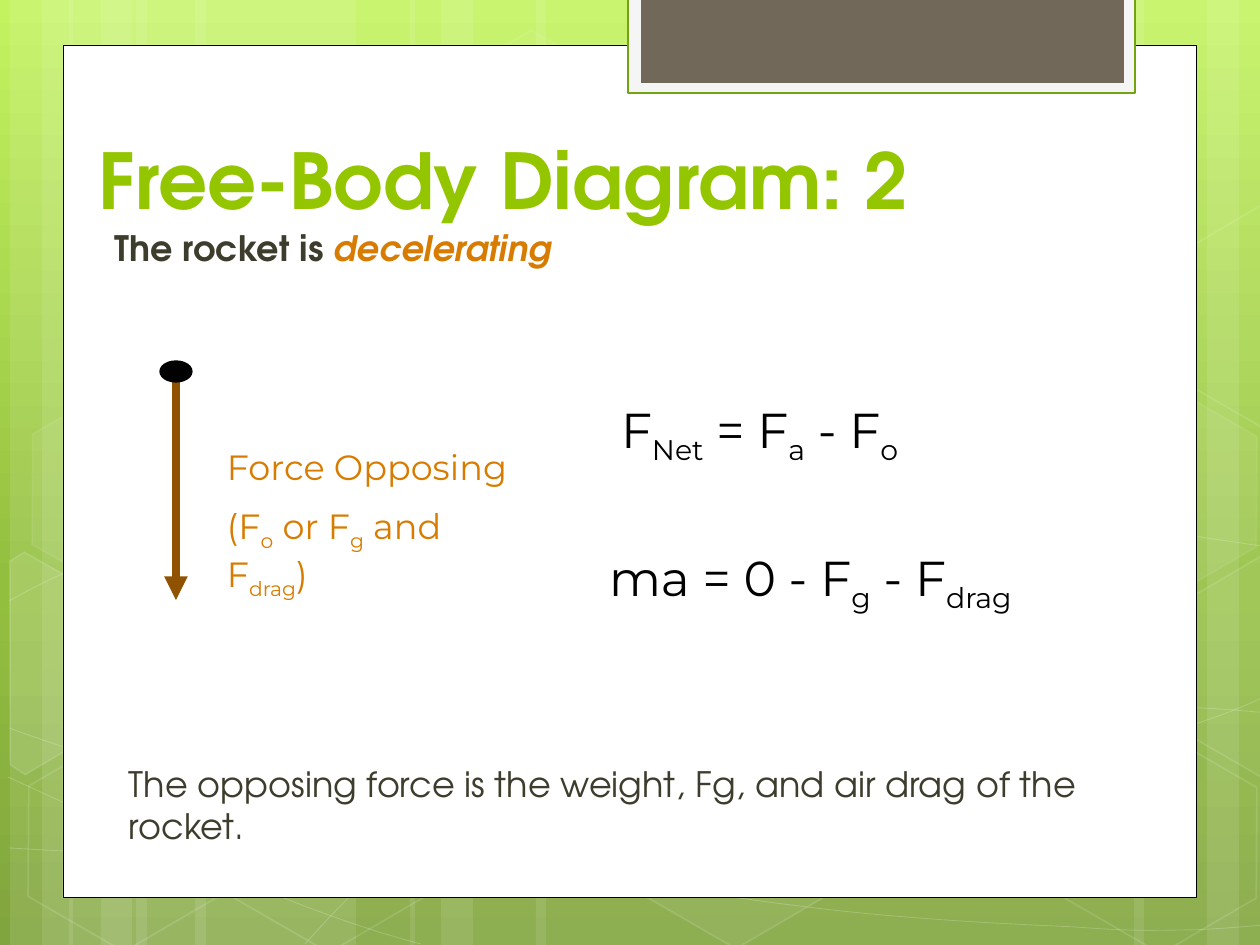
"""Build the slide on the forces acting on a decelerating rocket."""
from copy import deepcopy
from math import cos, radians, sin

from lxml.etree import SubElement
from pptx import Presentation
from pptx.dml.color import RGBColor
from pptx.enum.shapes import MSO_CONNECTOR, MSO_SHAPE
from pptx.enum.text import MSO_ANCHOR
from pptx.oxml.ns import qn
from pptx.util import Emu, Pt

EMU_PER_PX = 914400 / 126
TILT = 30
WHITE, BLACK, ORANGE, DARK = "FFFFFF", "000000", "D77C01", "3E3D2D"
HEAD_FONT, BODY_FONT = "TeX Gyre Adventor", "Montserrat"

STRIPES = [(136, 220), (10, 63), (42, 105), (195, 220), (69, 63), (101, 105),
           (924, 220), (1207, 63), (1134, 105), (536, 388), (410, 63), (441, 105)]
CURVES = [
    [(9, 848), (77, 852), (145, 856), (239, 854), (334, 853), (451, 851), (577, 838),
     (703, 825), (882, 801), (998, 777), (1113, 753), (1231, 716), (1269, 694)],
    [(9, 601), (45, 581), (82, 562), (152, 543), (224, 524), (326, 496), (437, 488),
     (549, 479), (685, 478), (824, 488), (963, 498), (1193, 537), (1269, 547)],
    [(8, 777), (160, 847), (311, 916), (421, 944)],
    [(9, 728), (48, 742), (88, 756), (161, 776), (234, 795), (344, 827), (450, 848),
     (554, 869), (687, 892), (791, 905), (896, 919), (1008, 924), (1075, 927),
     (1140, 932), (1158, 930), (1191, 930), (1223, 929), (1246, 926), (1269, 925)],
    [(305, 944), (328, 919), (350, 893), (381, 871), (411, 848), (454, 823), (489, 805),
     (524, 788), (546, 780), (592, 767), (638, 754), (722, 737), (766, 728),
     (811, 719), (818, 719), (857, 717), (896, 713), (958, 709), (1000, 708),
     (1044, 707), (1116, 708), (1116, 708), (1144, 708), (1173, 708), (1201, 708),
     (1223, 709), (1245, 711), (1256, 712), (1268, 713), (1264, 712), (1268, 713)],
]
HEXAGONS = [(421, 45, 4, 8), (626, 742, 6, 12), (14, 745, 0, 12), (18, 393, 7, 8),
            (219, 746, 0, 12), (949, 571, 10, 12), (1051, 747, 0, 12), (1051, 396, 7, 8)]
CUT_HEXAGONS = [
    ([(10, 561), (24, 552), (121, 607), (120, 718), (25, 774), (10, 765)], (45, 674), 10),
    ([(1167, 611), (1261, 556), (1271, 562), (1271, 772), (1263, 777), (1167, 722)],
     (1241, 655), 4),
    ([(1167, 261), (1261, 205), (1273, 212), (1271, 422), (1263, 427), (1167, 372)],
     (1241, 304), 0),
]


def px(n):
    return Emu(round(n * EMU_PER_PX))


def rgb(color):
    return RGBColor.from_string(color)


def untilt(points, center):
    c, s = cos(radians(TILT)), sin(radians(TILT))
    cx, cy = center
    return [(cx + (x - cx) * c + (y - cy) * s, cy - (x - cx) * s + (y - cy) * c)
            for x, y in points]


class Deck:
    def __init__(self):
        self.prs = Presentation()
        self.prs.slide_width, self.prs.slide_height = px(1260), px(945)
        self.s = self.prs.slides.add_slide(self.prs.slide_layouts[6])

    def background(self, *stops):
        fill = self.s.background.fill
        fill.gradient()
        fill.gradient_angle = 270
        gs_list = self.s._element.find(".//" + qn("a:gsLst"))
        gs_list.insert(1, deepcopy(gs_list[0]))
        for stop, (position, color) in zip(fill.gradient_stops, stops):
            stop.position, stop.color.rgb = position, rgb(color)

    def paint(self, target, color, alpha):
        target.solid()
        target.fore_color.rgb = rgb(color)
        if alpha < 100:
            clr = target._xPr.find(".//" + qn("a:srgbClr"))
            SubElement(clr, qn("a:alpha"), val=str(alpha * 1000))

    def style(self, sp, fill, fill_alpha, line, width, line_alpha):
        sp.shadow.inherit = False
        if fill and fill_alpha:
            self.paint(sp.fill, fill, fill_alpha)
        else:
            sp.fill.background()
        if line:
            self.paint(sp.line.fill, line, line_alpha)
            sp.line.width = Pt(width)
        else:
            sp.line.fill.background()
        return sp

    def shape(self, kind, x, y, w, h, fill, fill_alpha=100, line=None, width=1, line_alpha=100):
        sp = self.s.shapes.add_shape(kind, px(x), px(y), px(w), px(h))
        return self.style(sp, fill, fill_alpha, line, width, line_alpha)

    def outline(self, points, width, line_alpha, fill_alpha=0, close=False):
        builder = self.s.shapes.build_freeform(*points[0], scale=EMU_PER_PX)
        builder.add_line_segments(points[1:], close=close)
        sp = builder.convert_to_shape()
        return self.style(sp, WHITE, fill_alpha, WHITE, width, line_alpha)

    def curve(self, points, width, line_alpha):
        sp = self.outline(points, width, line_alpha)
        segments = list(sp._element.iter(qn("a:lnTo")))
        outline = segments[0].getparent()
        for i in range(0, len(segments), 3):
            bezier = SubElement(outline, qn("a:cubicBezTo"))
            for segment in segments[i:i + 3]:
                bezier.append(segment[0])
                outline.remove(segment)

    def arrow(self, x1, y1, x2, y2, color, width):
        sp = self.s.shapes.add_connector(MSO_CONNECTOR.STRAIGHT, px(x1), px(y1), px(x2), px(y2))
        sp.line.color.rgb, sp.line.width = rgb(color), Pt(width)
        SubElement(sp.line._get_or_add_ln(), qn("a:tailEnd"), type="triangle")
        SubElement(sp._element.spPr, qn("a:effectLst"))

    def text(self, x, y, w, h, text, size, color, font, bold=False, accent=None, indent=0):
        tf = self.s.shapes.add_textbox(px(x), px(y), px(w), px(h)).text_frame
        tf.word_wrap = True
        tf.margin_left = px(13 + indent)
        for i, line in enumerate(text.split("\n")):
            p = tf.add_paragraph() if i else tf.paragraphs[0]
            p.space_before = Pt(size / 2 if i else 0)
            for j, part in enumerate(line.split("|")):
                r = p.add_run()
                r.text = part
                r.font.name, r.font.size, r.font.bold = font, Pt(size), bold
                r.font.color.rgb = rgb(color)
                if j % 2 and accent:
                    r.font.italic, r.font.color.rgb = True, rgb(accent)
                elif j % 2:
                    r._r.get_or_add_rPr().set("baseline", "-25000")
        return tf


def main():
    deck = Deck()
    deck.background((0, "C3F35F"), (0.62, "93BF3F"), (1, "81A53E"))
    for x, w in STRIPES:
        deck.shape(MSO_SHAPE.RECTANGLE, x, 0, w, 945, WHITE, 10)
    for points in CURVES:
        deck.curve(points, 0.5, 20)
    for x, y, fill_alpha, line_alpha in HEXAGONS:
        sp = deck.shape(MSO_SHAPE.HEXAGON, x, y, 220, 192, WHITE, fill_alpha, WHITE, 1, line_alpha)
        sp.adjustments[0] = 0.285
        sp.rotation = TILT
    for points, center, fill_alpha in CUT_HEXAGONS:
        sp = deck.outline(untilt(points, center), 1, 12, fill_alpha, close=True)
        sp.rotation = TILT

    deck.shape(MSO_SHAPE.RECTANGLE, 63, 45, 1134, 853, WHITE, line=BLACK, width=0.5)
    deck.shape(MSO_SHAPE.RECTANGLE, 628, -3, 507, 96, "F5F5F5", line="74A510", width=1.25)
    deck.shape(MSO_SHAPE.RECTANGLE, 641, -3, 483, 86, "71685A")

    deck.arrow(176, 369, 176, 600, "8F5201", 4.5)
    deck.text(608, 393, 399, 72, "F|Net| = F|a| - F|o", 28, BLACK, BODY_FONT)
    deck.text(102, 220, 651, 55, "The rocket is |decelerating", 20, DARK, HEAD_FONT,
              bold=True, accent=ORANGE)
    deck.text(596, 541, 588, 72, "ma = 0 - F|g| - F|drag", 28, BLACK, BODY_FONT)
    deck.text(214, 439, 315, 204, "Force Opposing\n(F|o| or F|g| and F|drag|)", 20, ORANGE, BODY_FONT)
    deck.text(116, 756, 1002, 97, "The opposing force is the weight, Fg, and air drag of the rocket.",
              20, DARK, HEAD_FONT)
    deck.shape(MSO_SHAPE.OVAL, 160, 361, 32, 21, BLACK, line=BLACK, width=0.75)
    title = deck.text(71, 95, 1052, 136, "Free-Body Diagram: 2", 44, "94C600", HEAD_FONT,
                      bold=True, indent=15)
    title.vertical_anchor = MSO_ANCHOR.BOTTOM
    deck.prs.save("out.pptx")


if __name__ == "__main__":
    main()
